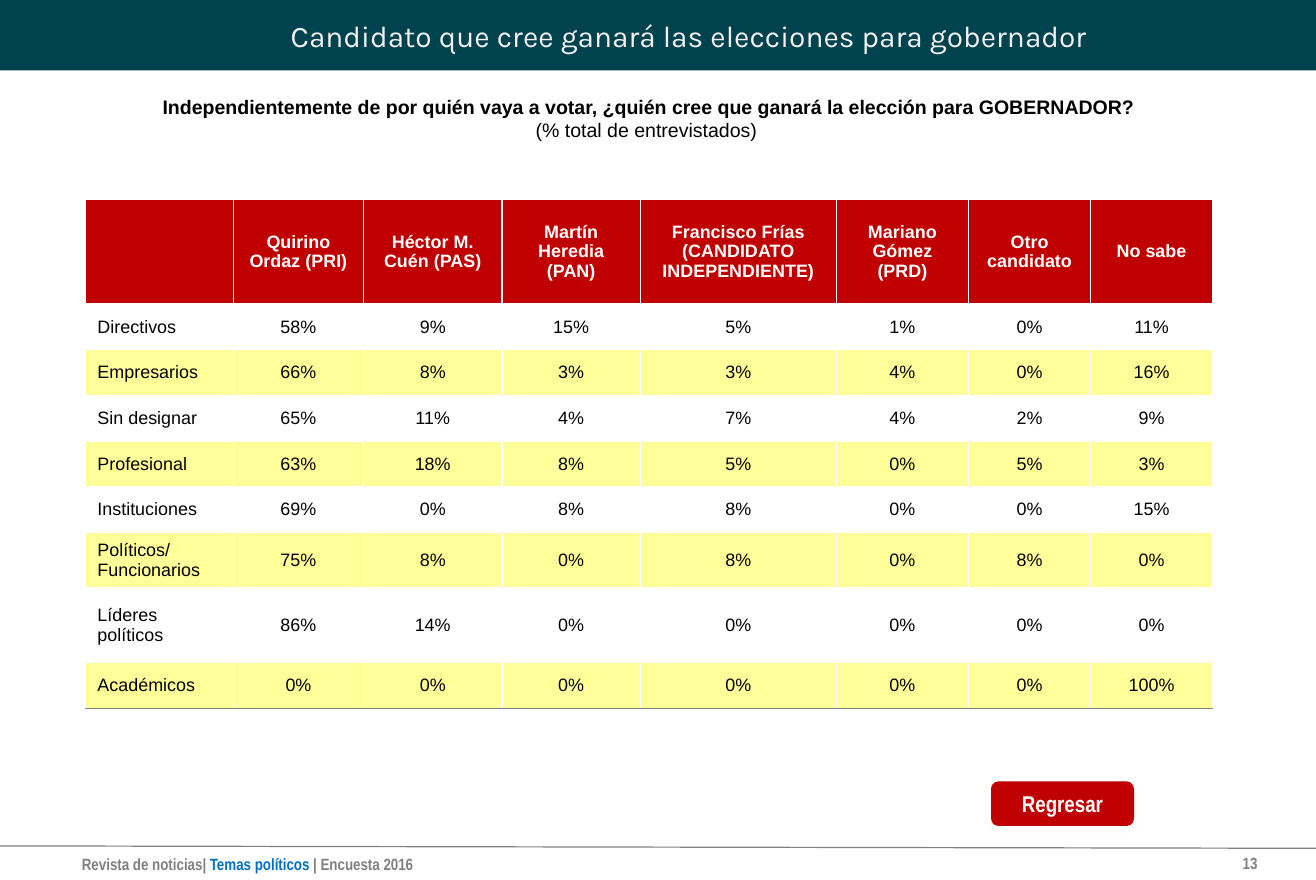
from lxml.etree import SubElement
from pptx import Presentation
from pptx.dml.color import RGBColor
from pptx.enum.shapes import MSO_CONNECTOR, MSO_SHAPE
from pptx.enum.text import MSO_ANCHOR, MSO_AUTO_SIZE, PP_ALIGN
from pptx.oxml.ns import qn
from pptx.util import Inches, Pt

WIDTH, HEIGHT = Inches(11.22), Inches(7.5)

COLORS = {
    "band": "01424F",
    "title": "F2F2F2",
    "red": "C00000",
    "yellow": "FFFF99",
    "gray": "808080",
    "blue": "0070C0",
    "white": "FFFFFF",
    "black": "000000",
}

CANDIDATES = [
    "", "Quirino Ordaz (PRI)", "Héctor M. Cuén (PAS)", "Martín Heredia (PAN)",
    "Francisco Frías (CANDIDATO INDEPENDIENTE)", "Mariano Gómez (PRD)",
    "Otro candidato", "No sabe",
]
ANSWERS = {
    "Directivos": [58, 9, 15, 5, 1, 0, 11],
    "Empresarios": [66, 8, 3, 3, 4, 0, 16],
    "Sin designar": [65, 11, 4, 7, 4, 2, 9],
    "Profesional": [63, 18, 8, 5, 0, 5, 3],
    "Instituciones": [69, 0, 8, 8, 0, 0, 15],
    "Políticos/Funcionarios": [75, 8, 0, 8, 0, 8, 0],
    "Líderes políticos": [86, 14, 0, 0, 0, 0, 0],
    "Académicos": [0, 0, 0, 0, 0, 0, 100],
}
# Shares of the slide, in percent
COLUMN_WIDTHS = [11.23, 9.89, 10.52, 10.52, 14.88, 10.07, 9.27, 9.27]
HEADER_HEIGHT, ROW_HEIGHT, TALL_ROW_HEIGHT = 11.87, 5.2, 8.53


def across(percent):
    return round(WIDTH * percent / 100)


def down(percent):
    return round(HEIGHT * percent / 100)


def area(left, top, width, height):
    """Turn percentages of the slide into a left, top, width, height tuple."""
    return across(left), down(top), across(width), down(height)


def color(name):
    return RGBColor.from_string(COLORS[name])


def write(para, text, font="Arial", size=11, ink="black", bold=False, align=PP_ALIGN.LEFT):
    para.alignment = align
    span = para.add_run()
    span.text = text
    span.font.name = font
    span.font.size = Pt(size)
    span.font.bold = bold
    span.font.color.rgb = color(ink)


def add_box(page, place, anchor=MSO_ANCHOR.TOP):
    frame = page.shapes.add_textbox(*place).text_frame
    frame.word_wrap = True
    frame.vertical_anchor = anchor
    return frame


def add_panel(page, kind, place, fill):
    panel = page.shapes.add_shape(kind, *place)
    panel.shadow.inherit = False
    panel.fill.solid()
    panel.fill.fore_color.rgb = color(fill)
    panel.line.fill.background()
    return panel


def add_color(parent, name):
    solid = SubElement(parent, qn("a:solidFill"))
    return SubElement(solid, qn("a:srgbClr"), val=COLORS[name])


def add_title(page):
    add_panel(page, MSO_SHAPE.RECTANGLE, area(0, -0.4, 100, 8.4), "band")
    title = page.shapes.title
    title.left, title.top, title.width, title.height = area(6.68, 0, 91.35, 8)
    frame = title.text_frame
    frame.auto_size = MSO_AUTO_SIZE.NONE
    frame.vertical_anchor = MSO_ANCHOR.MIDDLE
    write(frame.paragraphs[0], "Candidato que cree ganará las elecciones para gobernador",
          font="Karla", size=18.3, ink="title", align=PP_ALIGN.CENTER)
    page.shapes._spTree.append(title._element)  # bring the title in front of its band


def add_question(page):
    frame = add_box(page, area(6.51, 10.13, 85.65, 6.67))
    write(frame.paragraphs[0],
          "Independientemente de por quién vaya a votar, "
          "¿quién cree que ganará la elección para GOBERNADOR?",
          size=12, bold=True, align=PP_ALIGN.CENTER)
    write(frame.add_paragraph(), "(% total de entrevistados) ", size=12, align=PP_ALIGN.CENTER)


def format_cell(cell, text, fill, bottom, **text_format):
    cell.vertical_anchor = MSO_ANCHOR.MIDDLE
    properties = cell._tc.get_or_add_tcPr()
    for side in "LRTB":
        border = SubElement(properties, qn(f"a:ln{side}"), w=str(Pt(1)))
        add_color(border, bottom if side == "B" else "white")
    if fill:
        cell.fill.solid()
        cell.fill.fore_color.rgb = color(fill)
    else:
        cell.fill.background()
    if text:
        write(cell.text_frame.paragraphs[0], text, **text_format)


def add_answers(page):
    heights = [HEADER_HEIGHT] + [
        TALL_ROW_HEIGHT if group == "Líderes políticos" else ROW_HEIGHT for group in ANSWERS
    ]
    place = area(6.51, 22.67, sum(COLUMN_WIDTHS), sum(heights))
    table = page.shapes.add_table(len(heights), len(COLUMN_WIDTHS), *place).table
    table.horz_banding = False
    table.first_row = False
    for column, width in zip(table.columns, COLUMN_WIDTHS):
        column.width = across(width)
    for row, height in zip(table.rows, heights):
        row.height = down(height)

    for cell, candidate in zip(table.rows[0].cells, CANDIDATES):
        format_cell(cell, candidate, "red", "white", ink="white", bold=True,
                    align=PP_ALIGN.CENTER)
    for number, (group, shares) in enumerate(ANSWERS.items(), start=1):
        fill = "yellow" if number % 2 == 0 else None
        bottom = "gray" if number == len(ANSWERS) else "white"
        cells = list(table.rows[number].cells)
        format_cell(cells[0], group, fill, bottom)
        for cell, share in zip(cells[1:], shares):
            format_cell(cell, f"{share}%", fill, bottom, align=PP_ALIGN.CENTER)


def add_button(page):
    button = add_panel(page, MSO_SHAPE.ROUNDED_RECTANGLE, area(75.31, 88.8, 10.87, 5.07), "red")
    effects = button._element.spPr.find(qn("a:effectLst"))
    shadow = SubElement(effects, qn("a:outerShdw"), blurRad=str(Pt(3.1)), dist=str(Pt(1.8)),
                        dir="5400000", rotWithShape="0")
    SubElement(add_color(shadow, "black"), qn("a:alpha"), val="35000")
    button.text_frame.vertical_anchor = MSO_ANCHOR.MIDDLE
    write(button.text_frame.paragraphs[0], "Regresar", font="Arial Narrow", size=14,
          ink="white", bold=True, align=PP_ALIGN.CENTER)


def add_footer(page):
    rule = page.shapes.add_connector(MSO_CONNECTOR.STRAIGHT, 0, down(96.13), WIDTH, down(96.4))
    rule.line.color.rgb = color("gray")
    rule.line.width = Pt(0.75)
    SubElement(rule._element.spPr, qn("a:effectLst"))

    small = {"font": "Arial Narrow", "size": 10, "bold": True}
    credit = add_box(page, area(5.35, 96.4, 39.04, 3.6)).paragraphs[0]
    for text, ink in [("Revista de noticias| ", "gray"), ("Temas políticos ", "blue"),
                      ("| Encuesta 2016", "gray")]:
        write(credit, text, ink=ink, **small)
    number = add_box(page, area(91.44, 96.13, 4.99, 3.87), MSO_ANCHOR.MIDDLE)
    write(number.paragraphs[0], "13", ink="gray", align=PP_ALIGN.RIGHT, **small)


def main():
    deck = Presentation()
    deck.slide_width, deck.slide_height = WIDTH, HEIGHT
    page = deck.slides.add_slide(deck.slide_layouts[5])
    add_title(page)
    add_question(page)
    add_answers(page)
    add_button(page)
    add_footer(page)
    deck.save("out.pptx")


if __name__ == "__main__":
    main()
